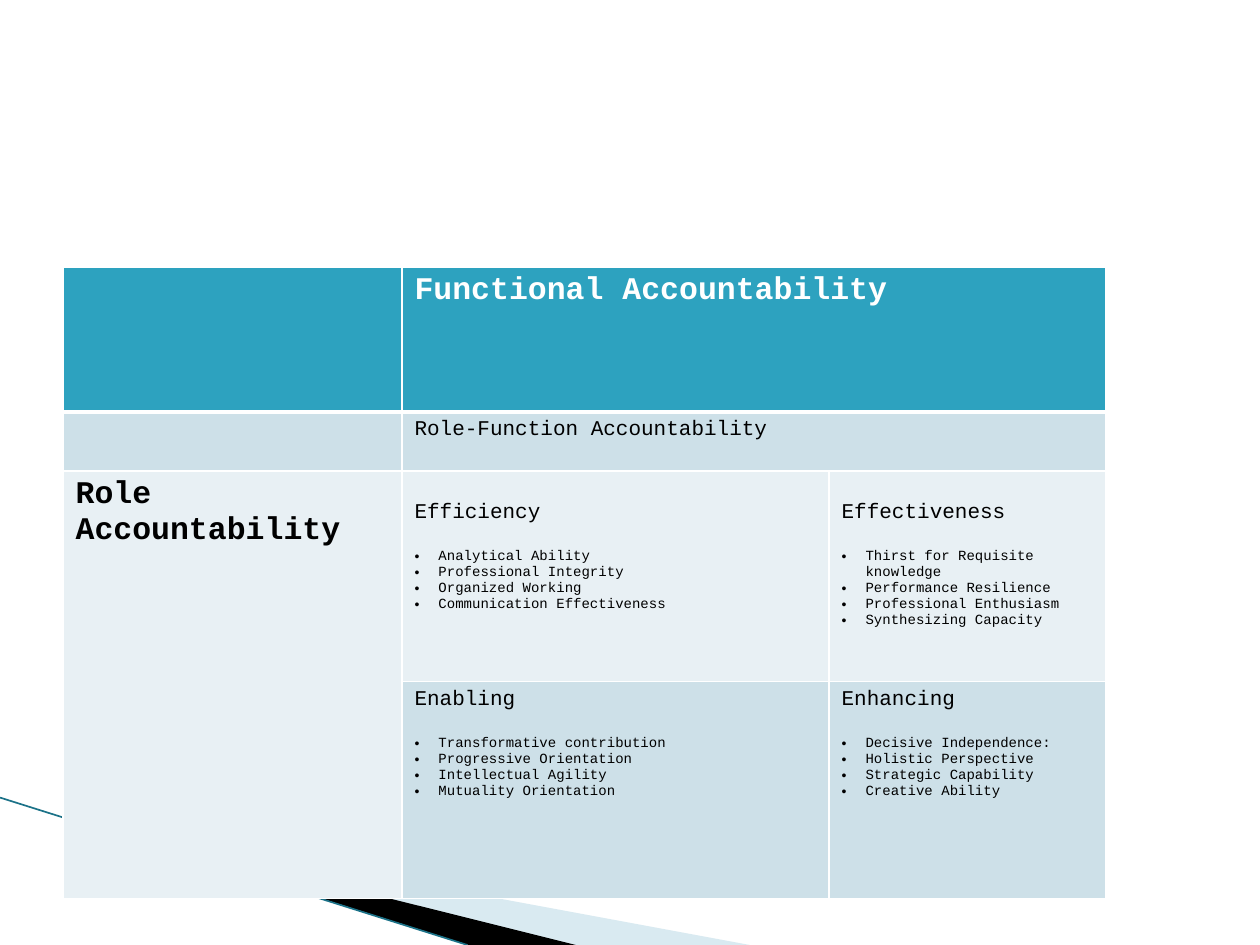
import dataclasses

import pptx
import pptx.dml.color
import pptx.enum.shapes
import pptx.oxml
import pptx.oxml.ns
import pptx.util
from pptx.util import Inches


@dataclasses.dataclass(frozen=True)
class Theme:
    font: str = "Courier New"
    head_size: float = 18
    title_size: float = 12
    list_size: float = 8
    teal: str = "2DA2BF"
    band: str = "CDE0E8"
    pale: str = "E8F0F4"
    white: str = "FFFFFF"
    black: str = "000000"
    swoosh: str = "A0CBDC"
    stroke: str = "1B7288"


T = Theme()
NS = pptx.oxml.ns.nsdecls("a")
COLS = [2.69, 3.39, 2.2]
ROWS = [1.15, 0.47, 1.67, 1.72]
QUADRANTS = [
    (2, 1, "Efficiency", ["Analytical Ability", "Professional Integrity",
                          "Organized Working", "Communication Effectiveness"]),
    (2, 2, "Effectiveness", ["Thirst for Requisite knowledge", "Performance Resilience",
                             "Professional Enthusiasm", "Synthesizing Capacity"]),
    (3, 1, "Enabling", ["Transformative contribution", "Progressive Orientation",
                        "Intellectual Agility", "Mutuality Orientation"]),
    (3, 2, "Enhancing", ["Decisive Independence:", "Holistic Perspective",
                         "Strategic Capability", "Creative Ability"]),
]


def rgb(value):
    return pptx.dml.color.RGBColor.from_string(value)


def add_text(tf, text, size=T.title_size, color=T.black, bold=False, bullet=False, before=0):
    p = tf.paragraphs[0] if not tf.text else tf.add_paragraph()
    if bullet:
        pPr = p._p.get_or_add_pPr()
        pPr.set("marL", str(Inches(0.19)))
        pPr.set("indent", str(-Inches(0.19)))
        pPr.append(pptx.oxml.parse_xml(f'<a:buFont {NS} typeface="Arial"/>'))
        pPr.append(pptx.oxml.parse_xml(f'<a:buChar {NS} char="•"/>'))
    if before:
        p.space_before = pptx.util.Pt(before)
    r = p.add_run()
    r.text = text
    r.font.name = T.font
    r.font.size = pptx.util.Pt(size)
    r.font.bold = bold
    r.font.color.rgb = rgb(color)


def style_cell(cell, fill, top=1, bottom=1):
    tcPr = cell._tc.get_or_add_tcPr()
    for side, width in (("L", 1), ("R", 1), ("T", top), ("B", bottom)):
        tcPr.append(pptx.oxml.parse_xml(
            f'<a:ln{side} {NS} w="{pptx.util.Pt(width)}"><a:solidFill>'
            f'<a:srgbClr val="{T.white}"/></a:solidFill></a:ln{side}>'))
    cell.fill.solid()
    cell.fill.fore_color.rgb = rgb(fill)


def add_wedge(s, x, y, points, color, alpha=100):
    points = [(Inches(x + dx), Inches(y + dy)) for dx, dy in points]
    fb = s.shapes.build_freeform(*points[0])
    fb.add_line_segments(points[1:])
    sp = fb.convert_to_shape()
    sp.shadow.inherit = False
    sp.line.fill.background()
    sp.fill.solid()
    sp.fill.fore_color.rgb = rgb(color)
    if alpha < 100:
        clr = sp._element.spPr.find(".//" + pptx.oxml.ns.qn("a:srgbClr"))
        clr.append(pptx.oxml.parse_xml(f'<a:alpha {NS} val="{alpha * 1000}"/>'))


def add_swoosh(s, x, y, w, h):
    add_wedge(s, x, y, [(0.55, 0.17), (w, h), (4.56, h)], T.swoosh, 40)
    add_wedge(s, x, y, [(0.53, 0.16), (4.57, h), (3.72, h)], T.black)
    line = s.shapes.add_connector(pptx.enum.shapes.MSO_CONNECTOR.STRAIGHT,
                                  Inches(x), Inches(y), Inches(x + 3.71), Inches(y + h))
    line.line.color.rgb = rgb(T.stroke)
    line.line.width = pptx.util.Pt(0.95)
    line._element.spPr.append(pptx.oxml.parse_xml(f"<a:effectLst {NS}/>"))


def add_matrix(s, x, y, w, h):
    table = s.shapes.add_table(len(ROWS), len(COLS), Inches(x), Inches(y),
                               Inches(w), Inches(h)).table
    for col, share in zip(table.columns, COLS):
        col.width = Inches(w * share / sum(COLS))
    for row, share in zip(table.rows, ROWS):
        row.height = Inches(h * share / sum(ROWS))

    for i, fill in enumerate([T.teal, T.band, T.pale, T.band]):
        for j in range(len(COLS)):
            style_cell(table.cell(i, j), T.pale if i == 3 and j == 0 else fill,
                       top=3 if i == 1 else 1, bottom=3 if i == 0 else 1)
    for i in (0, 1):
        table.cell(i, 1).merge(table.cell(i, 2))
    table.cell(2, 0).merge(table.cell(3, 0))

    add_text(table.cell(0, 1).text_frame, "Functional Accountability",
             size=T.head_size, color=T.white, bold=True)
    add_text(table.cell(1, 1).text_frame, "Role-Function Accountability")
    add_text(table.cell(2, 0).text_frame, "Role Accountability", size=T.head_size, bold=True)
    for i, j, title, items in QUADRANTS:
        cell = table.cell(i, j)
        if i == 2:
            cell.margin_top = Inches(0.24)
        add_text(cell.text_frame, title)
        for k, item in enumerate(items):
            add_text(cell.text_frame, item, size=T.list_size, bullet=True,
                     before=13.6 if k == 0 else 0)


def main():
    prs = pptx.Presentation()
    prs.slide_width, prs.slide_height = Inches(10), Inches(7.5)
    s = prs.slides.add_slide(prs.slide_layouts[6])
    add_swoosh(s, 0, 6.33, 5.95, 1.17)
    add_matrix(s, 0.5, 2.12, 8.28, 5.01)
    prs.save("out.pptx")


if __name__ == "__main__":
    main()
